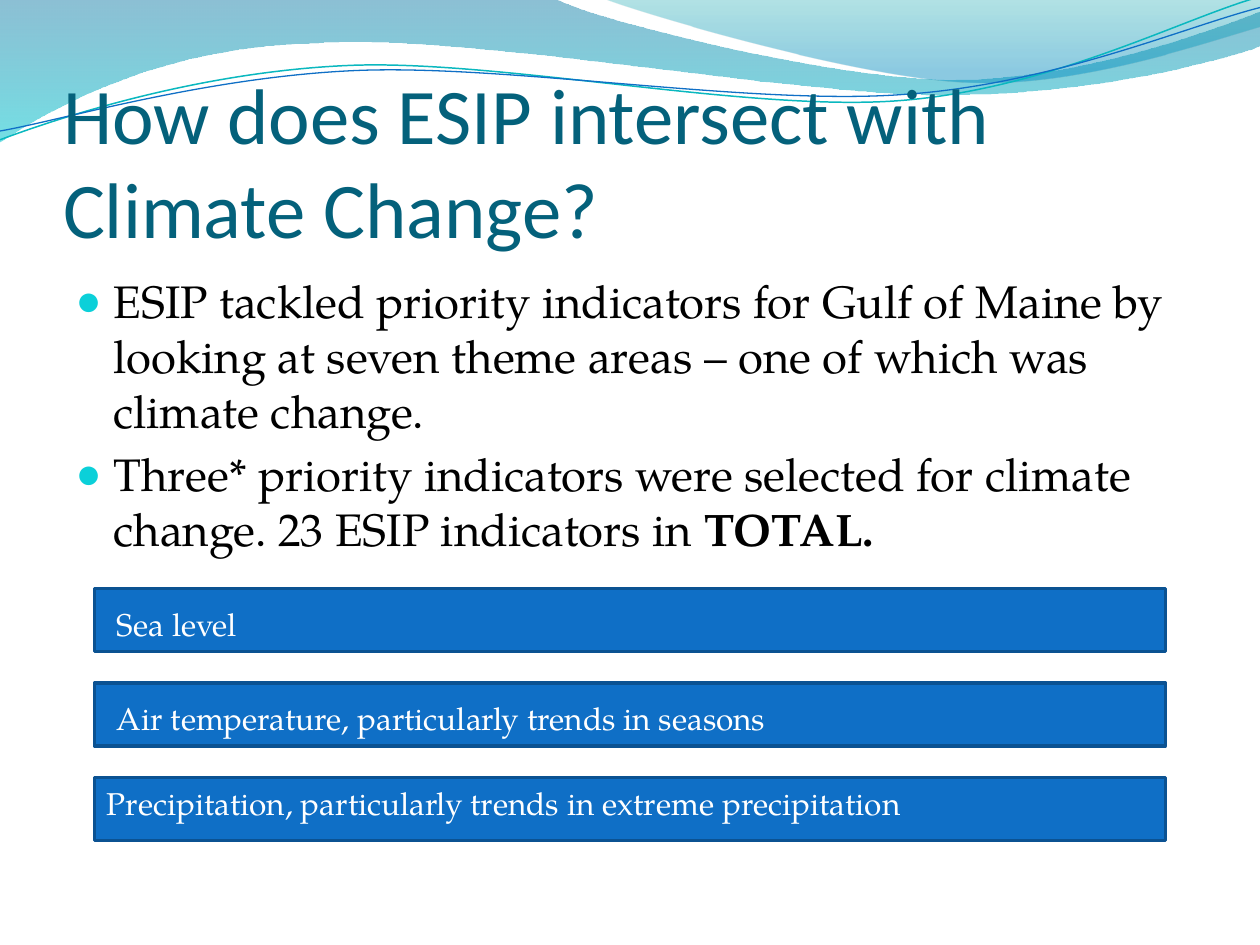
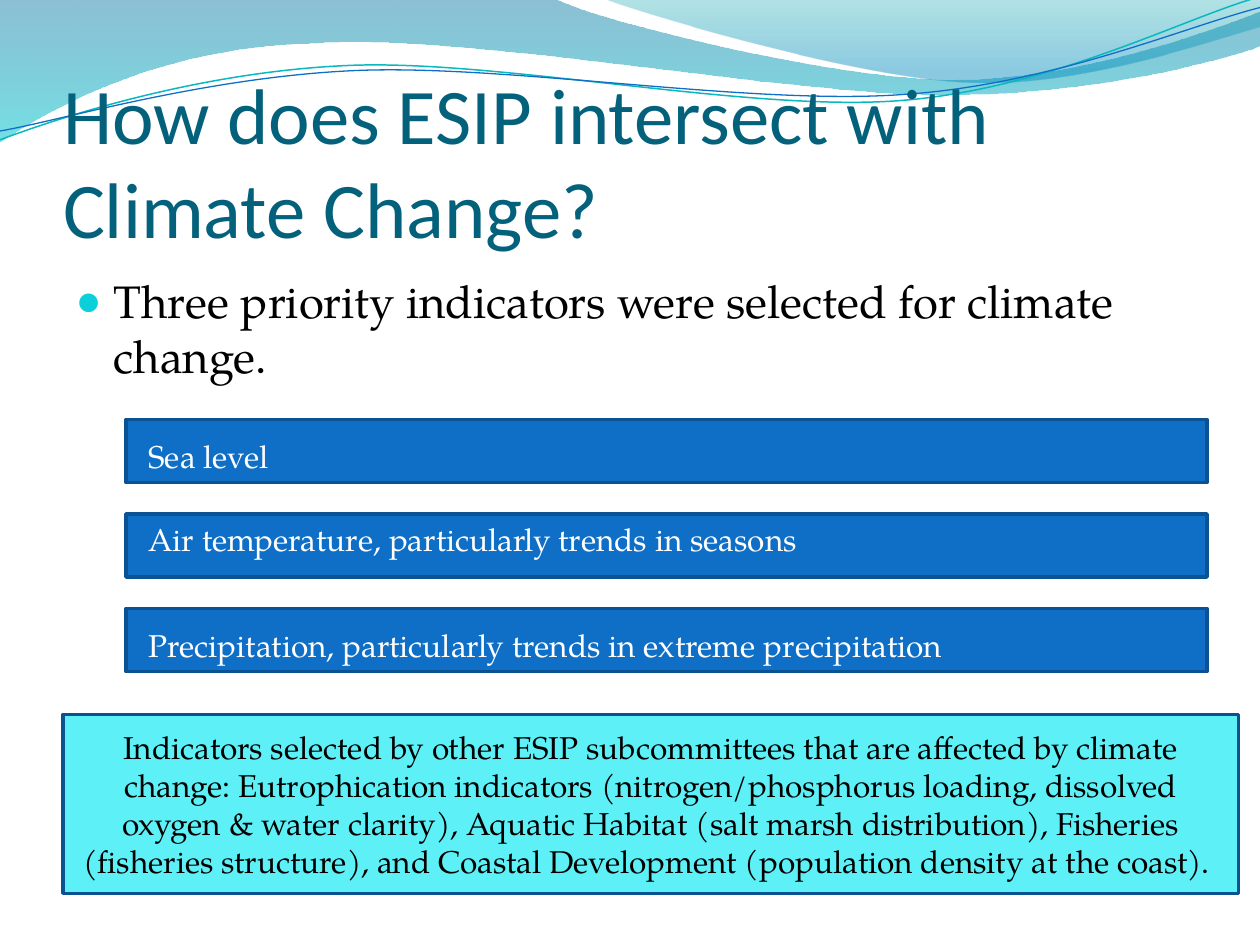
import dataclasses

import lxml.etree
import pptx
import pptx.dml.color
import pptx.enum.shapes
import pptx.enum.text
import pptx.oxml.ns
import pptx.util

Inches = pptx.util.Inches


@dataclasses.dataclass(frozen=True)
class Theme:
    heading_font: str = "Calibri"
    text_font: str = "TeX Gyre Pagella"
    heading: str = "04617B"
    ink: str = "000000"
    light: str = "FFFFFF"
    bullet: str = "0BD0D9"
    bar: str = "0F6FC6"
    outline: str = "0B5292"
    panel: str = "5EF0F7"
    teal_line: str = "0AB8BF"
    heading_size: float = 45
    body_size: float = 26
    label_size: float = 18
    outline_width: float = 2


THEME = Theme()
TITLE = "How does ESIP intersect with Climate Change?"
SEA = "Sea level"
AIR = "Air temperature, particularly trends in seasons"
RAIN = "Precipitation, particularly trends in extreme precipitation"
BAR_HEIGHT = 0.5
BAR_STEP = 0.75

BROAD_WAVE = [
    [(0, 0)], [(4.4, -0.01)],
    [(4.76, 0.17), (6.64, 0.63), (7.58, 0.63)],
    [(8.53, 0.63), (9.58, 0.26), (10, 0.09)],
    [(10.01, 0.36)],
    [(9.83, 0.44), (8.7, 0.76), (7.46, 0.75)],
    [(6.22, 0.75), (3.82, 0.28), (2.57, 0.34)],
    [(1.29, 0.36), (0.46, 0.83), (-0.01, 1.13)],
    [(0, 0)],
]
CORNER_WAVE = [
    [(4.79, -0.01)],
    [(5.09, 0.11), (6.82, 0.62), (7.69, 0.65)],
    [(8.56, 0.69), (9.61, 0.32), (10, 0.21)],
    [(10, 0)], [(4.79, -0.01)],
]
TEAL_CURVE = [
    [(0, 1.11)],
    [(0.48, 0.93), (1.58, 0.57), (2.77, 0.52)],
    [(3.95, 0.47), (5.93, 0.89), (7.13, 0.8)],
    [(8.33, 0.71), (9.38, 0.15), (9.98, -0.02)],
]
BLUE_CURVE = [
    [(0, 1.04)],
    [(0.47, 0.96), (1.64, 0.61), (2.83, 0.56)],
    [(4.03, 0.51), (5.97, 0.84), (7.17, 0.75)],
    [(8.36, 0.67), (9.41, 0.21), (10, 0.06)],
]


def rgb(color):
    return pptx.dml.color.RGBColor.from_string(color)


def add_xml(parent, tag, **attributes):
    return lxml.etree.SubElement(parent, pptx.oxml.ns.qn(tag), attributes)


def place(shape, left, top, width, height):
    shape.left, shape.top = Inches(left), Inches(top)
    shape.width, shape.height = Inches(width), Inches(height)


def format_runs(para, font, size, color):
    for span in para.runs:
        span.font.name = font
        span.font.size = pptx.util.Pt(size)
        span.font.color.rgb = rgb(color)


def bend_segments(shape, segments):
    lines = iter(list(shape.element.iter(pptx.oxml.ns.qn("a:lnTo"))))
    for segment in segments[1:]:
        group = [next(lines) for _ in segment]
        if len(group) == 3:
            outline = group[0].getparent()
            curve = add_xml(outline, "a:cubicBezTo")
            group[0].addprevious(curve)
            for line in group:
                curve.append(line[0])
                outline.remove(line)


def add_outline(page, segments, close):
    points = [(Inches(x), Inches(y)) for segment in segments for x, y in segment]
    builder = page.shapes.build_freeform(*points[0])
    builder.add_line_segments(points[1:], close=close)
    shape = builder.convert_to_shape()
    shape.shadow.inherit = False
    bend_segments(shape, segments)
    return shape


def add_wave(page, segments, stops):
    wave = add_outline(page, segments, True)
    wave.line.fill.background()
    wave.fill.gradient()
    wave.fill.gradient_angle = 270
    for stop, (position, color, opacity) in zip(wave.fill.gradient_stops, stops):
        stop.position = position
        stop.color.rgb = rgb(color)
    colors = wave.element.spPr.iter(pptx.oxml.ns.qn("a:srgbClr"))
    for node, (position, color, opacity) in zip(colors, stops):
        add_xml(node, "a:alpha", val=str(opacity * 1000))
    return wave


def add_curve(page, segments, color, width):
    curve = add_outline(page, segments, False)
    curve.fill.background()
    curve.line.color.rgb = rgb(color)
    curve.line.width = pptx.util.Pt(width)
    return curve


def decorate_master(master, page):
    ornaments = [
        add_wave(page, BROAD_WAVE, [(0, "0074A1", 45), (1, "00C6CF", 55)]),
        add_wave(page, CORNER_WAVE, [(0, "00A1A9", 30), (0.8, "008BBF", 45)]),
        add_curve(page, TEAL_CURVE, THEME.teal_line, 0.85),
        add_curve(page, BLUE_CURVE, THEME.bar, 0.75),
    ]
    for index, ornament in enumerate(ornaments):
        ornament.element.nvSpPr.cNvPr.set("id", str(100 + index))
        master.shapes.element.insert(2 + index, ornament.element)


def arrange_layout(layout):
    for holder in layout.placeholders:
        if holder.placeholder_format.idx == 0:
            place(holder, 0.5, 0.77, 9, 1.25)
        elif holder.placeholder_format.idx == 1:
            place(holder, 0.5, 2.12, 9, 4.8)


def set_title(page):
    frame = page.shapes.title.text_frame
    frame.text = TITLE
    frame.word_wrap = True
    frame.auto_size = pptx.enum.text.MSO_AUTO_SIZE.NONE
    frame.vertical_anchor = pptx.enum.text.MSO_ANCHOR.BOTTOM
    frame.margin_left = frame.margin_right = frame.margin_bottom = 0
    frame.margin_top = Inches(0.05)
    para = frame.paragraphs[0]
    para.alignment = pptx.enum.text.PP_ALIGN.LEFT
    format_runs(para, THEME.heading_font, THEME.heading_size, THEME.heading)


def add_bullet(para):
    properties = para._p.get_or_add_pPr()
    properties.set("marL", str(Inches(0.3)))
    properties.set("indent", str(Inches(-0.3)))
    add_xml(add_xml(properties, "a:spcBef"), "a:spcPct", val="20000")
    add_xml(add_xml(properties, "a:buClr"), "a:srgbClr", val=THEME.bullet)
    add_xml(properties, "a:buSzPct", val="95000")
    add_xml(properties, "a:buChar", char="●")


def set_bullets(page, lines):
    frame = page.placeholders[1].text_frame
    frame.text = "\n".join(lines)
    frame.auto_size = pptx.enum.text.MSO_AUTO_SIZE.NONE
    for para in frame.paragraphs:
        add_bullet(para)
        format_runs(para, THEME.text_font, THEME.body_size, THEME.ink)
    return frame.paragraphs


def add_bold_ending(para, text):
    span = para.add_run()
    span.text = text
    span.font.bold = True
    format_runs(para, THEME.text_font, THEME.body_size, THEME.ink)


def add_box(page, left, top, width, height, color):
    box = page.shapes.add_shape(pptx.enum.shapes.MSO_SHAPE.RECTANGLE, Inches(left),
                                Inches(top), Inches(width), Inches(height))
    box.shadow.inherit = False
    box.fill.solid()
    box.fill.fore_color.rgb = rgb(color)
    box.line.color.rgb = rgb(THEME.outline)
    box.line.width = pptx.util.Pt(THEME.outline_width)
    return box


def add_label(page, text, left, top, width):
    label = page.shapes.add_textbox(Inches(left), Inches(top), Inches(width), Inches(0.4))
    frame = label.text_frame
    frame.word_wrap = True
    frame.auto_size = pptx.enum.text.MSO_AUTO_SIZE.SHAPE_TO_FIT_TEXT
    frame.text = text
    format_runs(frame.paragraphs[0], THEME.text_font, THEME.label_size, THEME.light)


def add_indicators(page, left, top, width, labels):
    bar_tops = [top + index * BAR_STEP for index in range(len(labels))]
    for bar_top in bar_tops:
        add_box(page, left, bar_top, width, BAR_HEIGHT, THEME.bar)
    for bar_top, (text, shift, drop, label_width) in zip(bar_tops, labels):
        add_label(page, text, left + shift, bar_top + drop, label_width)


def add_panel(page, text):
    panel = add_box(page, 0.5, 5.67, 9.33, 1.42, THEME.panel)
    frame = panel.text_frame
    frame.word_wrap = True
    frame.vertical_anchor = pptx.enum.text.MSO_ANCHOR.MIDDLE
    frame.text = text
    para = frame.paragraphs[0]
    para.alignment = pptx.enum.text.PP_ALIGN.CENTER
    format_runs(para, THEME.text_font, THEME.label_size, THEME.ink)


def main():
    deck = pptx.Presentation()
    deck.slide_width, deck.slide_height = Inches(10), Inches(7.5)
    layout = deck.slide_layouts[1]
    arrange_layout(layout)
    overview, related = [deck.slides.add_slide(layout) for _ in range(2)]
    decorate_master(deck.slide_master, overview)
    for page in (overview, related):
        set_title(page)

    paras = set_bullets(overview, [
        "ESIP tackled priority indicators for Gulf of Maine by looking at seven theme "
        "areas – one of which was climate change.",
        "Three* priority indicators were selected for climate change. 23 ESIP indicators in ",
    ])
    add_bold_ending(paras[1], "TOTAL.")
    add_indicators(overview, 0.75, 4.67, 8.5,
                   [(SEA, 0.08, 0.08, 2.75), (AIR, 0.08, 0.08, 8.5), (RAIN, 0, 0, 8.5)])

    set_bullets(related, ["Three priority indicators were selected for climate change."])
    add_indicators(related, 1, 3.33, 8.58,
                   [(SEA, 0.08, 0.09, 2.75), (AIR, 0.08, 0, 8.5), (RAIN, 0.08, 0.09, 8.5)])
    add_panel(related, "Indicators selected by other ESIP subcommittees that are affected by "
                       "climate change: Eutrophication indicators (nitrogen/phosphorus loading, "
                       "dissolved oxygen & water clarity), Aquatic Habitat (salt marsh "
                       "distribution), Fisheries (fisheries structure), and Coastal Development "
                       "(population density at the coast). ")
    deck.save("out.pptx")


if __name__ == "__main__":
    main()
